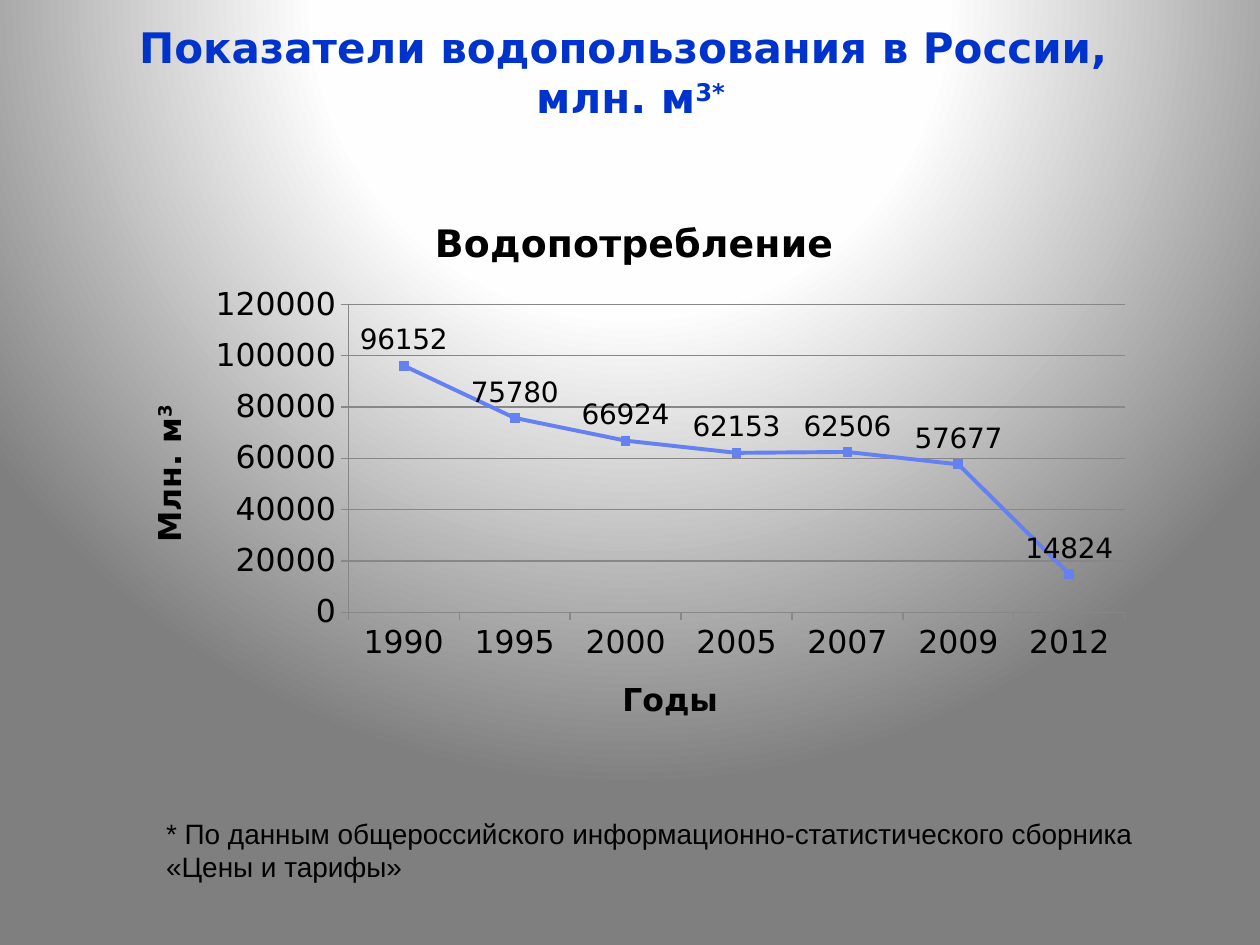
from lxml import etree
from pptx import Presentation
from pptx.chart.data import CategoryChartData
from pptx.dml.color import RGBColor
from pptx.enum.chart import XL_CHART_TYPE, XL_LABEL_POSITION, XL_MARKER_STYLE, XL_TICK_MARK
from pptx.enum.text import MSO_ANCHOR, PP_ALIGN
from pptx.oxml import parse_xml
from pptx.oxml.ns import nsdecls, qn
from pptx.util import Inches, Pt

TITLE = ["Показатели водопользования в России, ", "млн. м"]
TITLE_SUPER = "3*"
NOTE = "* По данным общероссийского информационно-статистического сборника «Цены и тарифы»"
SERIES = "Водопотребление"
USAGE = {"1990": 96152, "1995": 75780, "2000": 66924, "2005": 62153,
         "2007": 62506, "2009": 57677, "2012": 14824}
COLORS = {"title": "0033CC", "text": "000000", "line": "6580F1", "grid": "878787"}
GLOW = [(0, "FFFFFF"), (40, "FEFEFE"), (100, "7F7F7F")]
PLOT = {"x": 0.22, "y": 0.2, "w": 0.76, "h": 0.55}
HEAD_FONT, NOTE_FONT = "DejaVu Sans", "Arial"


def style(font, size, color="text", bold=False, name=HEAD_FONT):
    font.name, font.size, font.bold = name, Pt(size), bold
    font.color.rgb = RGBColor.from_string(COLORS[color])


def add_run(p, text, size, raised=False, **look):
    r = p.add_run()
    r.text = text
    style(r.font, size, **look)
    if raised:
        r.font._element.set("baseline", "30000")


def set_background(slide):
    """Radial gradient centred above the slide."""
    fill = slide.background.fill
    fill.gradient()
    stops = "".join(f'<a:gs pos="{pos * 1000}"><a:srgbClr val="{color}"/></a:gs>'
                    for pos, color in GLOW)
    grad = parse_xml(
        f'<a:gradFill {nsdecls("a")} rotWithShape="1"><a:gsLst>{stops}</a:gsLst>'
        '<a:path path="circle"><a:fillToRect l="50000" t="-80000" r="50000" b="180000"/>'
        '</a:path></a:gradFill>')
    old = slide._element.find(".//" + qn("a:gradFill"))
    old.getparent().replace(old, grad)


def set_plot_layout(chart):
    area = chart._chartSpace.find(".//" + qn("c:plotArea"))
    for old in area.findall(qn("c:layout")):
        area.remove(old)
    layout = etree.Element(qn("c:layout"))
    manual = etree.SubElement(layout, qn("c:manualLayout"))
    values = {"layoutTarget": "inner", "xMode": "edge", "yMode": "edge", **PLOT}
    for tag, value in values.items():
        etree.SubElement(manual, qn("c:" + tag)).set("val", str(value))
    area.insert(0, layout)


def add_usage_chart(slide):
    data = CategoryChartData()
    data.categories = list(USAGE)
    data.add_series(SERIES, list(USAGE.values()))
    chart = slide.shapes.add_chart(XL_CHART_TYPE.LINE_MARKERS, Inches(0.98), Inches(1.53),
                                   Inches(8.11), Inches(4.44), data).chart
    style(chart.font, 18)
    chart.has_legend = False
    chart.has_title = True
    add_run(chart.chart_title.text_frame.paragraphs[0], SERIES, 21.6, bold=True)
    set_plot_layout(chart)

    grid_color = RGBColor.from_string(COLORS["grid"])
    cat, val = chart.category_axis, chart.value_axis
    for axis, title in ((cat, "Годы"), (val, "Млн. м")):
        add_run(axis.axis_title.text_frame.paragraphs[0], title, 18, bold=True)
        axis.major_tick_mark = XL_TICK_MARK.OUTSIDE
        axis.format.line.color.rgb = grid_color
        axis.format.line.width = Pt(0.75)
    add_run(val.axis_title.text_frame.paragraphs[0], "3", 18, raised=True, bold=True)
    val.minimum_scale, val.maximum_scale, val.major_unit = 0, 120000, 20000
    val.major_gridlines.format.line.color.rgb = grid_color
    val.major_gridlines.format.line.width = Pt(0.75)

    plot = chart.plots[0]
    plot.vary_by_categories = False
    series = plot.series[0]
    series.smooth = False
    line_color = RGBColor.from_string(COLORS["line"])
    series.format.line.color.rgb = line_color
    series.format.line.width = Pt(2.25)
    marker = series.marker
    marker.style, marker.size = XL_MARKER_STYLE.SQUARE, 5
    marker.format.fill.solid()
    marker.format.fill.fore_color.rgb = line_color
    marker.format.line.color.rgb = line_color
    labels = series.data_labels
    labels.show_value = True
    labels.position = XL_LABEL_POSITION.ABOVE
    style(labels.font, 16)


def main():
    prs = Presentation()
    prs.slide_width, prs.slide_height = Inches(10), Inches(7.5)
    slide = prs.slides.add_slide(prs.slide_layouts[5])
    set_background(slide)

    title = slide.shapes.title
    title.left, title.top, title.width, title.height = map(Inches, (0.51, 0.3, 8.99, 0.54))
    tf = title.text_frame
    tf.word_wrap = True
    tf.vertical_anchor = MSO_ANCHOR.MIDDLE
    p = tf.paragraphs[0]
    p.alignment = PP_ALIGN.CENTER
    look = {"color": "title", "bold": True}
    add_run(p, TITLE[0], 24, **look)
    p.add_line_break()
    add_run(p, TITLE[1], 24, **look)
    add_run(p, TITLE_SUPER, 24, raised=True, **look)

    add_usage_chart(slide)

    note = slide.shapes.add_textbox(Inches(1.22), Inches(6.43), Inches(8.03), Inches(0.64))
    note.text_frame.word_wrap = True
    add_run(note.text_frame.paragraphs[0], NOTE, 16, name=NOTE_FONT)

    prs.save("out.pptx")


if __name__ == "__main__":
    main()
